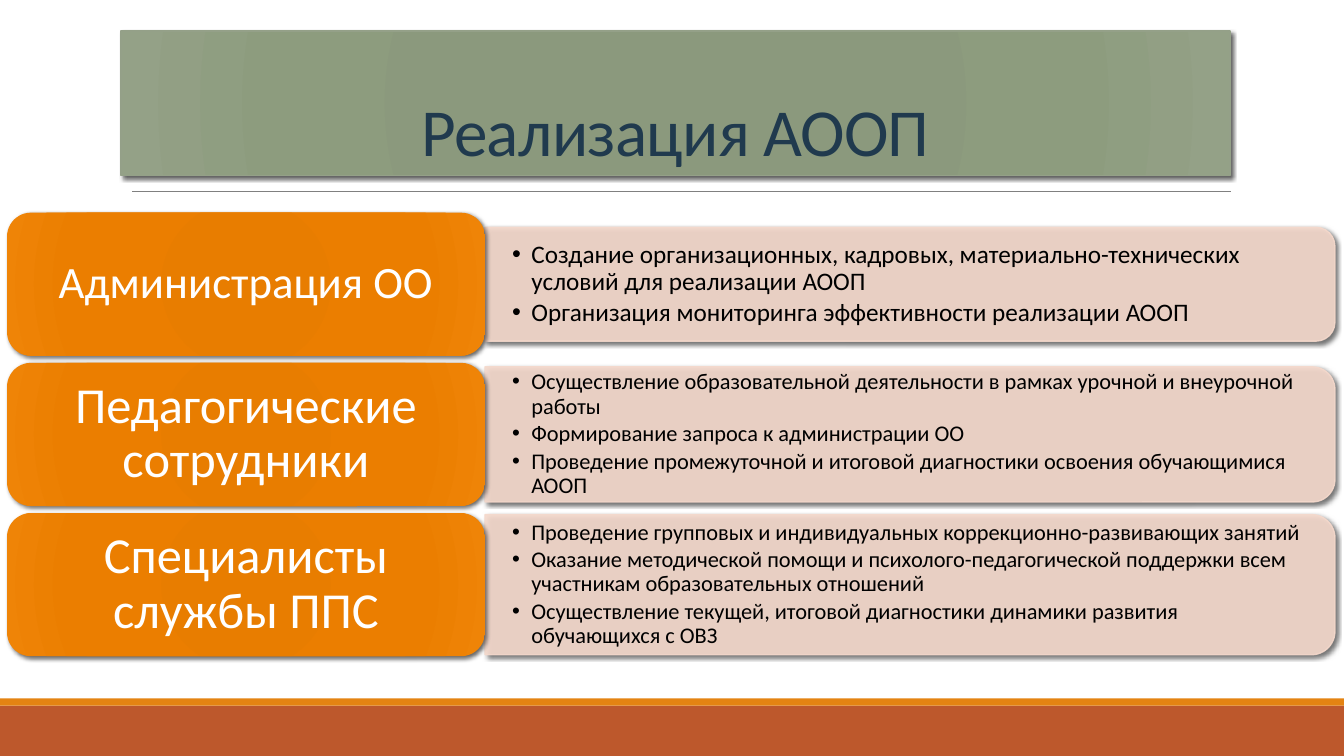
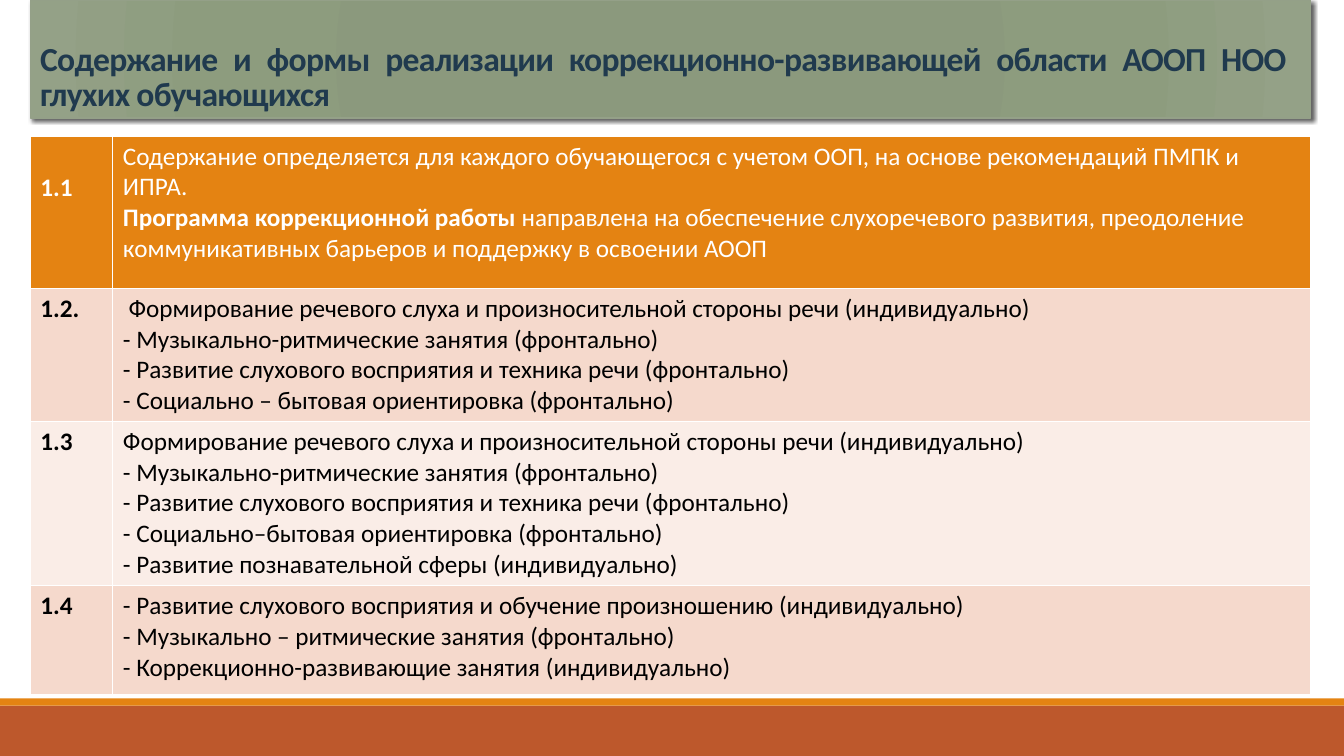
from lxml.etree import SubElement
from pptx import Presentation
from pptx.dml.color import RGBColor
from pptx.enum.shapes import MSO_CONNECTOR, MSO_SHAPE
from pptx.enum.text import MSO_ANCHOR, PP_ALIGN
from pptx.oxml import parse_xml
from pptx.oxml.ns import nsdecls, qn
from pptx.util import Inches, Pt

COLOURS = {
    "band": "BD582C", "accent": "E48312", "rule": "808080",
    "title": "203A4E", "title_edge": "94A088",
    "peach": "F5D9CC", "pale": "FAEDE7", "white": "FFFFFF", "black": "000000",
}
GREEN_STOPS = ["8A987B", "8B997D", "8D9C7E", "94A187"]
ORANGE_STOPS = ["E57B00", "E87D00", "EB7E00", "EF8407"]
STOP_PLACES = [0, 34, 70, 100]
FONT = "Calibri"


def paint(shape, fill, edge=None, blur=0, opacity=100):
    """Fill with one colour or a list of gradient stops, then set line and shadow."""
    shape.fill.solid()
    props = shape.fill._xPr
    if isinstance(fill, list):
        stops = "".join(
            f'<a:gs pos="{place * 1000}"><a:srgbClr val="{colour}"/></a:gs>'
            for place, colour in zip(STOP_PLACES, fill))
        gradient = parse_xml(
            f'<a:gradFill {nsdecls("a")} rotWithShape="1"><a:gsLst>{stops}</a:gsLst>'
            '<a:path path="circle"><a:fillToRect l="100000" t="100000" r="100000" '
            'b="100000"/></a:path></a:gradFill>')
        props.replace(props.find(qn("a:solidFill")), gradient)
    else:
        shape.fill.fore_color.rgb = RGBColor.from_string(fill)
    if edge:
        shape.line.color.rgb = RGBColor.from_string(edge)
        shape.line.width = Pt(1)
    else:
        shape.line.fill.background()
    if opacity < 100:
        for colour in list(props.iter(qn("a:srgbClr"))):
            SubElement(colour, qn("a:alpha"), val=str(opacity * 1000))
    shape.shadow.inherit = False
    if blur:
        props.find(qn("a:effectLst")).append(parse_xml(
            f'<a:outerShdw {nsdecls("a")} blurRad="{Pt(blur)}" dist="{Pt(2)}" '
            'dir="2700000" algn="ctr" rotWithShape="0"><a:srgbClr val="000000">'
            '<a:alpha val="60000"/></a:srgbClr></a:outerShdw>'))


def write(para, text, size, colour, bold=False):
    span = para.add_run()
    span.text = text
    span.font.name = FONT
    span.font.size = Pt(size)
    span.font.bold = bold
    span.font.color.rgb = RGBColor.from_string(COLOURS[colour])
    return span


deck = Presentation()
deck.slide_width, deck.slide_height = Inches(13.33), Inches(7.5)

# Shared frame: footer bands and title panel
titles = [
    ("Реализация АООП", (1.2, 0.31, 11, 1.43), 48, False, PP_ALIGN.CENTER, 0.1),
    ("Содержание и формы реализации коррекционно-развивающей области АООП НОО "
     "глухих обучающихся", (0.3, 0, 12.7, 1.17), 24, True, PP_ALIGN.JUSTIFY, 0.25),
]
pages = []
for text, place, size, bold, align, right_margin in titles:
    page = deck.slides.add_slide(deck.slide_layouts[6])
    pages.append(page)
    for top, height, colour in [(7, 0.5, "band"), (6.93, 0.07, "accent")]:
        band = page.shapes.add_shape(
            MSO_SHAPE.RECTANGLE, 0, Inches(top), deck.slide_width, Inches(height))
        paint(band, COLOURS[colour])
    panel = page.shapes.add_shape(MSO_SHAPE.RECTANGLE, *map(Inches, place))
    paint(panel, GREEN_STOPS, COLOURS["title_edge"], blur=3)
    frame = panel.text_frame
    frame.word_wrap = True
    frame.vertical_anchor = MSO_ANCHOR.BOTTOM
    frame.margin_right = Inches(right_margin)
    para = frame.paragraphs[0]
    para.alignment = align
    para.line_spacing = 0.85
    span = write(para, text, size, "title", bold)
    span._r.get_or_add_rPr().set("spc", "-50")

roles_page, content_page = pages

# Rule under the first title
rule = roles_page.shapes.add_connector(
    MSO_CONNECTOR.STRAIGHT, Inches(1.31), Inches(1.9), Inches(12.21), Inches(1.9))
rule.line.color.rgb = RGBColor.from_string(COLOURS["rule"])
rule.line.width = Pt(0.5)
SubElement(rule._element.spPr, qn("a:effectLst"))

# Roles: label on the left, duties in a bar on the right
roles = [
    ("Администрация ОО", 32, 1.13, 18, [
        "Создание организационных, кадровых, материально-технических условий "
        "для реализации АООП",
        "Организация мониторинга эффективности реализации АООП"]),
    ("Педагогические сотрудники", 36, 1.34, 16, [
        "Осуществление образовательной деятельности в рамках урочной и внеурочной работы",
        "Формирование запроса к администрации ОО",
        "Проведение промежуточной и итоговой диагностики освоения обучающимися АООП"]),
    ("Специалисты службы ППС", 36, 1.39, 16, [
        "Проведение групповых и индивидуальных коррекционно-развивающих занятий",
        "Оказание методической помощи и психолого-педагогической поддержки всем "
        "участникам образовательных отношений",
        "Осуществление текущей, итоговой диагностики динамики развития "
        "обучающихся с ОВЗ"]),
]
LABEL_LEFT, LABEL_WIDTH, LABEL_HEIGHT = 0.07, 4.74, 1.42
BAR_LEFT, BAR_LENGTH = LABEL_LEFT + LABEL_WIDTH, 8.43
FIRST_MIDDLE, ROLE_STEP = 2.82, 1.49

for index, (role, role_size, bar_height, duty_size, duties) in enumerate(roles):
    middle = FIRST_MIDDLE + index * ROLE_STEP

    # Bar turned a quarter so that its rounded end points right
    bar = roles_page.shapes.add_shape(
        MSO_SHAPE.ROUND_2_SAME_RECTANGLE,
        Inches(BAR_LEFT + (BAR_LENGTH - bar_height) / 2), Inches(middle - BAR_LENGTH / 2),
        Inches(bar_height), Inches(BAR_LENGTH))
    bar.rotation = 90
    paint(bar, COLOURS["peach"], COLOURS["peach"], blur=3, opacity=90)

    box = roles_page.shapes.add_textbox(
        Inches(BAR_LEFT), Inches(middle - bar_height / 2),
        Inches(BAR_LENGTH - 0.05), Inches(bar_height))
    frame = box.text_frame
    frame.word_wrap = True
    frame.vertical_anchor = MSO_ANCHOR.MIDDLE
    frame.margin_left = frame.margin_right = Inches(0.27)
    for number, duty in enumerate(duties):
        para = frame.add_paragraph() if number else frame.paragraphs[0]
        para.line_spacing = 0.9
        para.space_after = Pt(2.5)
        write(para, duty, duty_size, "black")
        props = para._p.get_or_add_pPr()
        props.set("marL", str(Inches(0.19)))
        props.set("indent", str(-Inches(0.19)))
        SubElement(props, qn("a:buFont"), typeface="Arial")
        SubElement(props, qn("a:buChar"), char="•")

    label = roles_page.shapes.add_shape(
        MSO_SHAPE.ROUNDED_RECTANGLE, Inches(LABEL_LEFT), Inches(middle - LABEL_HEIGHT / 2),
        Inches(LABEL_WIDTH), Inches(LABEL_HEIGHT))
    paint(label, ORANGE_STOPS, blur=3.5)
    frame = label.text_frame
    frame.word_wrap = True
    frame.vertical_anchor = MSO_ANCHOR.MIDDLE
    frame.margin_left = frame.margin_right = Inches(0.15)
    para = frame.paragraphs[0]
    para.alignment = PP_ALIGN.CENTER
    para.line_spacing = 0.9
    write(para, role, role_size, "white")

# Content table: number, row height, fill, text colour, paragraphs of (text, bold) runs
music = [("- Музыкально-ритмические занятия (фронтально)", False)]
hearing = [("- Развитие слухового восприятия и техника речи (фронтально)", False)]
speech = "Формирование речевого слуха и произносительной стороны речи (индивидуально)"
rows = [
    ("1.1", 1.51, "accent", "white", [
        [("Содержание определяется для каждого обучающегося с учетом ООП, на основе "
          "рекомендаций ПМПК и ИПРА.", False)],
        [("Программа коррекционной работы ", True),
         ("направлена на обеспечение слухоречевого развития, преодоление "
          "коммуникативных барьеров и поддержку в освоении АООП", False)]]),
    ("1.2.", 1.31, "peach", "black", [
        [(" " + speech, False)], music, hearing,
        [("- Социально – бытовая ориентировка (фронтально)", False)]]),
    ("1.3", 1.63, "pale", "black", [
        [(speech, False)], music, hearing,
        [("- Социально–бытовая ориентировка (фронтально)", False)],
        [("- Развитие познавательной сферы (индивидуально)", False)]]),
    ("1.4", 1.08, "peach", "black", [
        [("- Развитие слухового восприятия и обучение произношению (индивидуально)", False)],
        [("- Музыкально – ритмические занятия (фронтально)", False)],
        [("- Коррекционно-развивающие занятия (индивидуально)", False)]]),
]
table = content_page.shapes.add_table(
    len(rows), 2, Inches(0.3), Inches(1.35), Inches(12.7),
    Inches(sum(row[1] for row in rows))).table
table.columns[0].width, table.columns[1].width = Inches(0.82), Inches(11.88)
for index, (number, height, fill, colour, paragraphs) in enumerate(rows):
    table.rows[index].height = Inches(height)
    for column, content in enumerate([[[(number, True)]], paragraphs]):
        cell = table.cell(index, column)
        cell.fill.solid()
        cell.fill.fore_color.rgb = RGBColor.from_string(COLOURS[fill])
        for position, spans in enumerate(content):
            frame = cell.text_frame
            para = frame.add_paragraph() if position else frame.paragraphs[0]
            for text, bold in spans:
                write(para, text, 18, colour, bold)
# The first number stands one line lower
table.cell(0, 0).margin_top = Inches(0.36)

deck.save("out.pptx")
